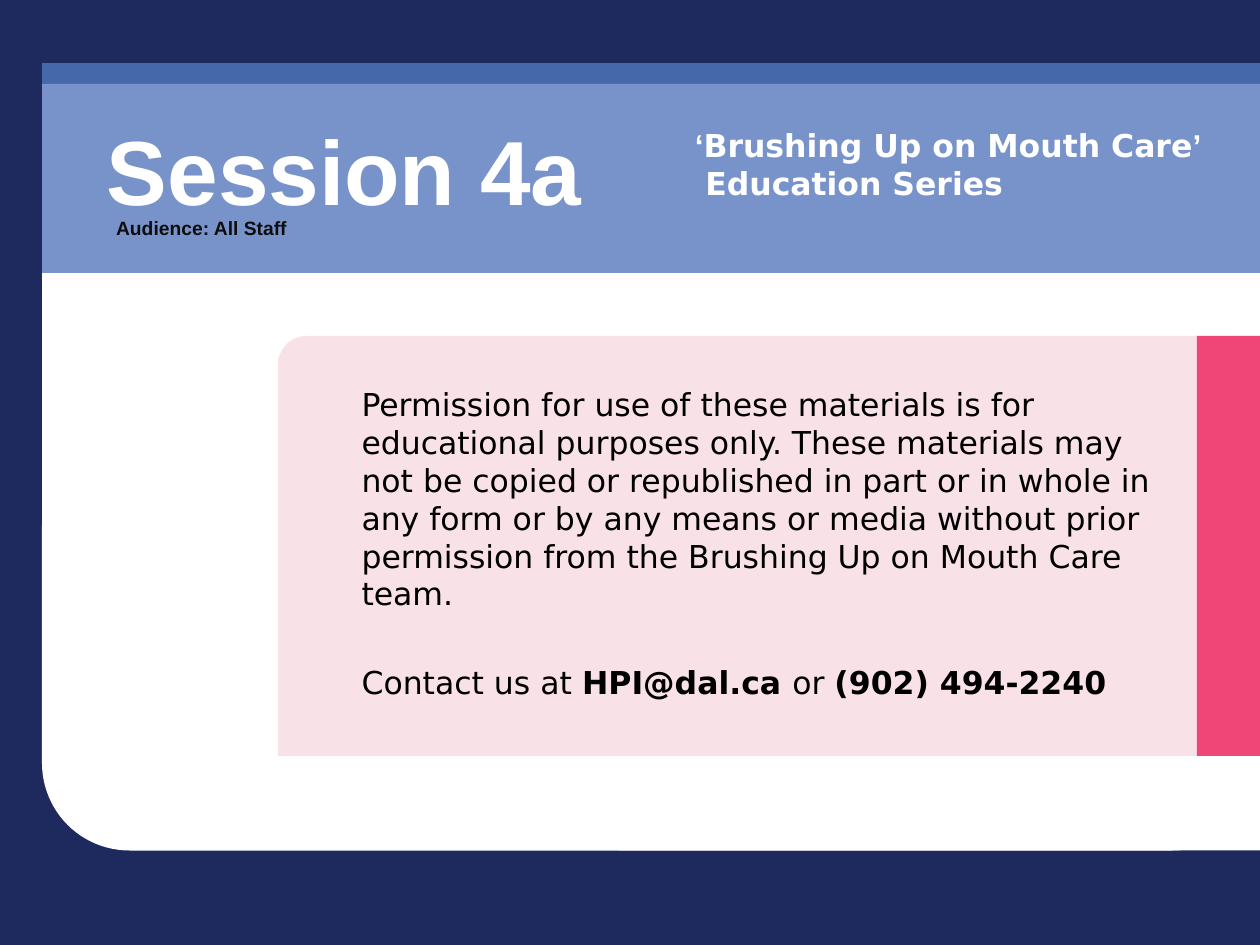
from pptx import Presentation
from pptx.dml.color import RGBColor
from pptx.enum.shapes import MSO_SHAPE
from pptx.enum.text import MSO_ANCHOR
from pptx.util import Pt

PX = 9525
W, H = 960, 720
COLORS = {
    "navy": "1E2A5E", "white": "FFFFFF", "blue": "4568AA", "sky": "7893CA",
    "blush": "F9E1E8", "pink": "F04577", "black": "000000", "ink": "0D0D0D",
}
RECT, ROUND = MSO_SHAPE.RECTANGLE, MSO_SHAPE.ROUNDED_RECTANGLE

prs = Presentation()
prs.slide_width, prs.slide_height = W * PX, H * PX
s = prs.slides.add_slide(prs.slide_layouts[6])

for kind, x, y, w, h, color in [
    (RECT, 0, 0, W, H, "navy"),
    (ROUND, 32, 248, 928, 400, "white"),
    (RECT, 32, 128, 928, 192, "white"),
    (RECT, 472, 208, 488, 440, "white"),
    (RECT, 32, 48, 928, 160, "blue"),
    (ROUND, 212, 256, 748, 128, "blush"),
    (RECT, 212, 273, 724, 303, "blush"),
    (RECT, 912, 256, 48, 320, "pink"),
    (RECT, 32, 64, 928, 144, "sky"),
]:
    sp = s.shapes.add_shape(kind, x * PX, y * PX, w * PX, h * PX)
    sp.shadow.inherit = False
    sp.fill.solid()
    sp.fill.fore_color.rgb = RGBColor.from_string(COLORS[color])
    sp.line.fill.background()


def add_text(box, paragraphs, size, color, font, bold=None, anchor=MSO_ANCHOR.TOP):
    tf = s.shapes.add_textbox(*(v * PX for v in box)).text_frame
    tf.word_wrap = True
    tf.vertical_anchor = anchor
    for i, runs in enumerate(paragraphs):
        p = tf.paragraphs[0] if i == 0 else tf.add_paragraph()
        p.font.size, p.font.bold = Pt(size), bold
        p.font.color.rgb = RGBColor.from_string(COLORS[color])
        if font:
            p.font.name = font
        for text, attrs in runs:
            r = p.add_run()
            r.text = text
            for name, value in attrs.items():
                setattr(r.font, name, value)
    return tf


tf = add_text((266, 289, 622, 191), [
    [("Permission for use of these materials is for educational purposes only. "
      "These materials may not be copied or republished in part or in whole in "
      "any form or by any means or media without prior permission from the "
      "Brushing Up on Mouth Care team.", {})],
    [("Contact us at ", {}), ("HPI@dal.ca ", {"bold": True}),
     ("or ", {}), ("(902) 494-2240", {"bold": True})],
], 18, "black", "DejaVu Sans")
tf.paragraphs[1].space_before = Pt(29)

add_text((72, 90, 398, 78), [[("Session 4a", {})]], 52, "white", "Arial", True,
         MSO_ANCHOR.MIDDLE)
add_text((79, 160, 362, 32), [[("Audience: All Staff", {})]], 11, "ink", "Arial", True)

tf = add_text((520, 65, 440, 120), [
    [("‘", {"name": "Arial"}),
     ("Brushing Up on Mouth Care", {"name": "DejaVu Sans"}),
     ("’", {"name": "Arial"})],
    [("Education Series", {"name": "DejaVu Sans"})],
], 18, "white", None, True, MSO_ANCHOR.MIDDLE)
pPr = tf.paragraphs[1]._p.get_or_add_pPr()
pPr.set("marL", str(8 * PX))
pPr.set("indent", "0")

prs.save("out.pptx")
